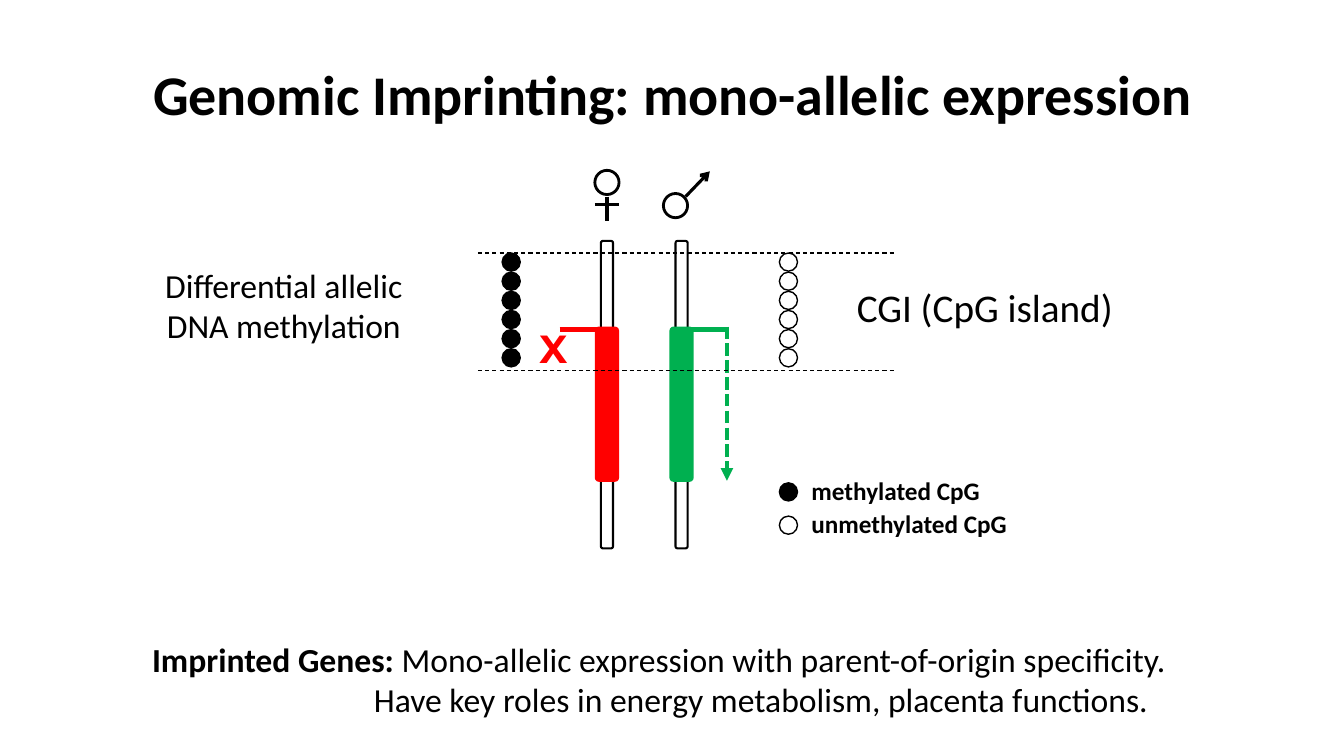
from pptx import Presentation
from pptx.dml.color import RGBColor
from pptx.enum.dml import MSO_LINE
from pptx.enum.shapes import MSO_CONNECTOR, MSO_SHAPE
from pptx.enum.text import MSO_ANCHOR, PP_ALIGN
from pptx.oxml.ns import qn
from pptx.util import Inches, Pt
from lxml.etree import SubElement

BLACK, WHITE, RED, GREEN = "000000", "FFFFFF", "FF0000", "00B050"
MOTHER_X, FATHER_X = 6.02, 6.76
CGI_TOP, CGI_BOTTOM = 2.51, 3.68
GENE_TOP, GENE_HEIGHT = 3.24, 1.54
CPG_SIZE, CPG_STEP = 0.18, 0.19
METHYLATED_X, UNMETHYLATED_X = 5.07, 7.82

deck = Presentation()
deck.slide_width, deck.slide_height = Inches(13.33), Inches(7.5)
slide = deck.slides.add_slide(deck.slide_layouts[5])


def add_centred(preset, center_x, top, width, height, fill=None, outline=None, weight=1):
    """Add a preset shape placed by its centre line and top edge."""
    part = slide.shapes.add_shape(
        preset, Inches(center_x - width / 2), Inches(top), Inches(width), Inches(height))
    part.shadow.inherit = False
    if fill:
        part.fill.solid()
        part.fill.fore_color.rgb = RGBColor.from_string(fill)
    else:
        part.fill.background()
    if outline:
        part.line.color.rgb = RGBColor.from_string(outline)
        part.line.width = Pt(weight)
    else:
        part.line.fill.background()


def add_line(start, end, color, weight, dash=None, arrowhead=None):
    stroke = slide.shapes.add_connector(
        MSO_CONNECTOR.STRAIGHT, *[Inches(value) for value in (*start, *end)])
    stroke.line.color.rgb = RGBColor.from_string(color)
    stroke.line.width = Pt(weight)
    if dash:
        stroke.line.dash_style = dash
    properties = stroke._element.spPr
    if arrowhead:
        SubElement(properties.find(qn("a:ln")), qn("a:tailEnd"), type=arrowhead)
    SubElement(properties, qn("a:effectLst"))


# Title
title = slide.shapes.title
title.left, title.top, title.width, title.height = map(Inches, (0.67, 0.3, 12, 1.25))
title.text_frame.text = "Genomic Imprinting: mono-allelic expression"
title.text_frame.vertical_anchor = MSO_ANCHOR.MIDDLE
heading = title.text_frame.paragraphs[0]
heading.alignment = PP_ALIGN.CENTER
heading.font.name, heading.font.size, heading.font.bold = "Calibri", Pt(40), True
heading.font.color.rgb = RGBColor.from_string(BLACK)

# CpG sites: methylated on the maternal side, unmethylated on the paternal side
for column_x, fill in ((METHYLATED_X, BLACK), (UNMETHYLATED_X, None)):
    for site in range(6):
        add_centred(MSO_SHAPE.OVAL, column_x, CGI_TOP + site * CPG_STEP,
                    CPG_SIZE, CPG_SIZE, fill, BLACK)

# Alleles with the silenced and the expressed gene
add_line((7.21, GENE_TOP), (7.21, 4.77), GREEN, 3, MSO_LINE.SQUARE_DOT, "triangle")
for allele_x, color in ((MOTHER_X, RED), (FATHER_X, GREEN)):
    add_centred(MSO_SHAPE.ROUNDED_RECTANGLE, allele_x, 2.39, 0.12, 3.05, WHITE, BLACK, 1.5)
    add_centred(MSO_SHAPE.ROUNDED_RECTANGLE, allele_x, GENE_TOP, 0.24, GENE_HEIGHT, color)
add_line((6.8, 3.27), (7.22, 3.27), GREEN, 3)
add_line((5.55, 3.27), (5.98, 3.27), RED, 3)

# Male and female signs
add_centred(MSO_SHAPE.OVAL, 6.7, 1.92, 0.24, 0.24, WHITE, BLACK, 2)
add_line((6.8, 1.95), (7.04, 1.7), BLACK, 2.25, arrowhead="arrow")
add_centred(MSO_SHAPE.OVAL, MOTHER_X, 1.69, 0.24, 0.24, WHITE, BLACK, 2)
add_line((MOTHER_X, 1.95), (MOTHER_X, 2.19), BLACK, 2.25)
add_line((MOTHER_X - 0.12, 2.03), (MOTHER_X + 0.12, 2.03), BLACK, 2.25)

# Limits of the CpG island
for limit_y in (CGI_TOP, CGI_BOTTOM):
    add_line((4.74, limit_y), (8.89, limit_y), BLACK, 0.75, MSO_LINE.DASH)

# Legend markers
for marker_y, fill in ((4.79, BLACK), (5.12, None)):
    add_centred(MSO_SHAPE.OVAL, UNMETHYLATED_X, marker_y, CPG_SIZE, CPG_SIZE, fill, BLACK)

# Labels
labels = [
    ("Differential allelic\nDNA methylation", (1.52, 2.58, 2.59, 0.91),
     24, "Calibri", BLACK, False, PP_ALIGN.CENTER),
    ("X", (5.25, 3.17, 0.51, 0.57), 28, "Montserrat", RED, True, PP_ALIGN.LEFT),
    ("CGI (CpG island)", (8.4, 2.76, 2.77, 0.57), 28, "Calibri", BLACK, False, PP_ALIGN.LEFT),
    ("methylated CpG", (7.95, 4.67, 1.89, 0.4), 18, "Calibri", BLACK, True, PP_ALIGN.LEFT),
    ("unmethylated CpG", (7.95, 4.99, 2.16, 0.4), 18, "Calibri", BLACK, True, PP_ALIGN.LEFT),
]
for words, place, size, typeface, color, bold, alignment in labels:
    label = slide.shapes.add_textbox(*map(Inches, place)).text_frame
    label.word_wrap = False
    label.text = words
    for paragraph in label.paragraphs:
        paragraph.alignment = alignment
        paragraph.font.name, paragraph.font.size = typeface, Pt(size)
        paragraph.font.bold = bold
        paragraph.font.color.rgb = RGBColor.from_string(color)

# Definition, its second line hanging under the first
definition = slide.shapes.add_textbox(*map(Inches, (1.41, 6.29, 10.77, 0.91))).text_frame
definition.word_wrap = True
definition.text = "Imprinted Genes: "
statement = definition.paragraphs[0]
statement.runs[0].font.bold = True
statement.add_run().text = "Mono-allelic expression with parent-of-origin specificity."
statement.add_line_break()
statement.add_run().text = "Have key roles in energy metabolism, placenta functions."
hanging = Inches(2.2)
indents = statement._p.get_or_add_pPr()
indents.set("marL", str(hanging))
indents.set("indent", str(-hanging))
for run in statement.runs:
    run.font.name, run.font.size = "Calibri", Pt(24)
    run.font.color.rgb = RGBColor.from_string(BLACK)

deck.save("out.pptx")
